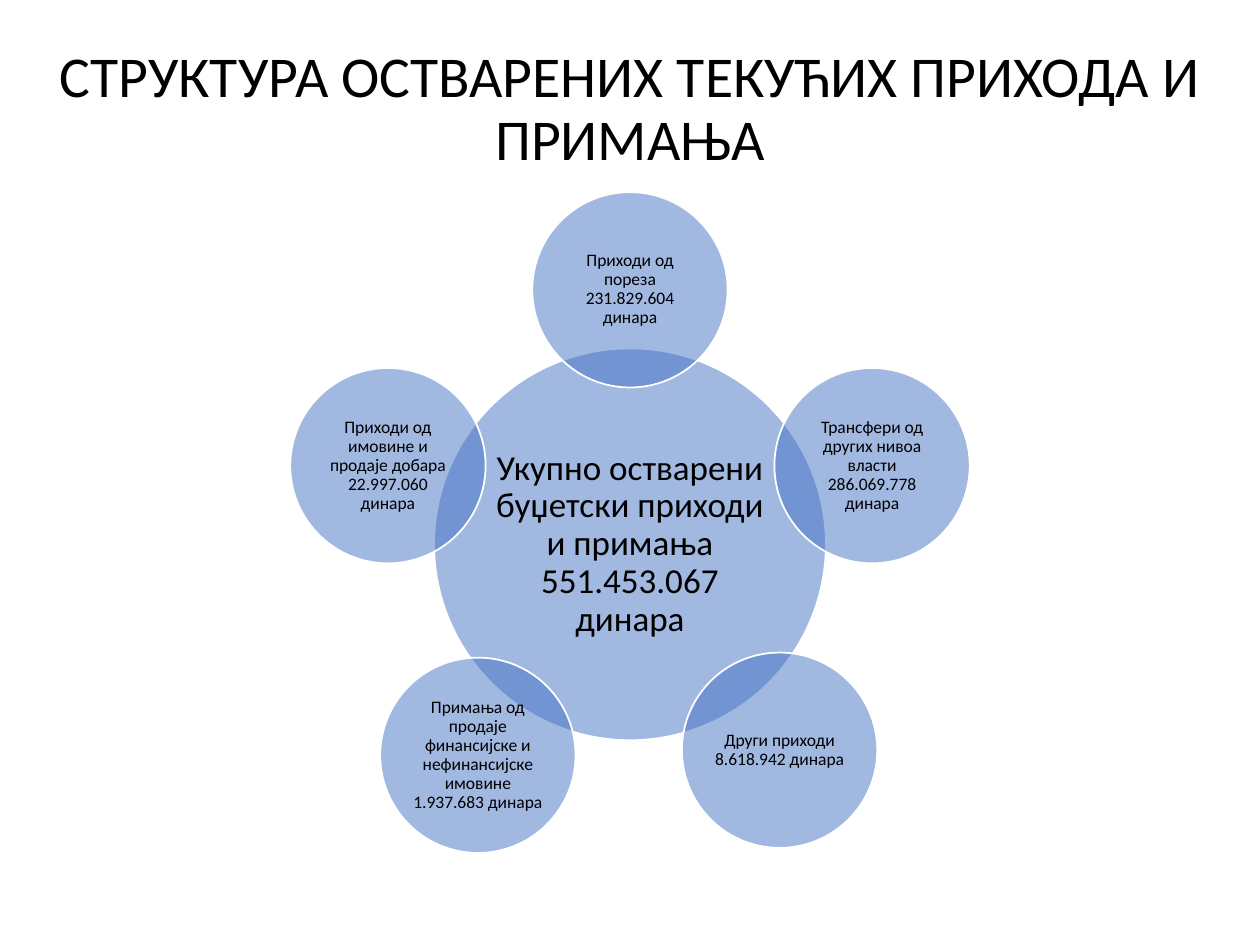
from math import cos, radians, sin, sqrt

from lxml.etree import SubElement
from pptx import Presentation
from pptx.dml.color import RGBColor
from pptx.enum.shapes import MSO_SHAPE as Shape
from pptx.enum.text import MSO_ANCHOR as Anchor, PP_ALIGN as Align
from pptx.oxml.ns import qn
from pptx.util import Inches, Pt

TITLE = "СТРУКТУРА ОСТВАРЕНИХ ТЕКУЋИХ ПРИХОДА И ПРИМАЊА"
TOTAL = "Укупно остварени буџетски приходи и примања 551.453.067 динара"
# Clockwise from the top: text, nudge right, nudge down
SOURCES = [
    ("Приходи од пореза 231.829.604 динара", 0, 0),
    ("Трансфери од других нивоа власти 286.069.778 динара", 0, 0),
    ("Други приходи 8.618.942 динара", 0, 0),
    ("Примања од продаје финансијске и нефинансијске имовине 1.937.683 динара",
     -0.02, 0.04),
    ("Приходи од имовине и продаје добара 22.997.060 динара", 0, 0),
]

COLORS = {"circle": "4472C4", "outline": "FFFFFF", "text": "000000"}
FONT = "Calibri"
CENTER_X, CENTER_Y = 5, 4.32
ORBIT = 2.02
TOTAL_SIZE, SOURCE_SIZE = 3.11, 1.55


def color(name):
    return RGBColor.from_string(COLORS[name])


def add_text(shapes, text, left, top, width, height, size, anchor, inset):
    box = shapes.add_textbox(*map(Inches, (left, top, width, height)))
    frame = box.text_frame
    frame.word_wrap = True
    frame.vertical_anchor = anchor
    frame.margin_left = frame.margin_right = Inches(inset[0])
    frame.margin_top = frame.margin_bottom = Inches(inset[1])
    para = frame.paragraphs[0]
    para.alignment = Align.CENTER
    para.line_spacing = 0.9
    span = para.add_run()
    span.text = text
    span.font.name = FONT
    span.font.size = Pt(size)
    span.font.color.rgb = color("text")


def add_circle(shapes, text, x, y, diameter, size, inset):
    """Add a half-transparent circle centred on x, y with text in its inner square."""
    corner = (x - diameter / 2, y - diameter / 2)
    circle = shapes.add_shape(
        Shape.OVAL, *map(Inches, (*corner, diameter, diameter)))
    circle.shadow.inherit = False
    circle.fill.solid()
    circle.fill.fore_color.rgb = color("circle")
    fill_color = circle.fill._xPr.find(qn("a:solidFill"))[0]
    SubElement(fill_color, qn("a:alpha"), val="50000")
    circle.line.color.rgb = color("outline")
    circle.line.width = Pt(1)

    side = diameter / sqrt(2)
    add_text(shapes, text, x - side / 2, y - side / 2, side, side,
             size, Anchor.MIDDLE, (inset, inset))


def main():
    deck = Presentation()
    deck.slide_width, deck.slide_height = Inches(10), Inches(7.5)
    page = deck.slides.add_slide(deck.slide_layouts[6])

    add_text(page.shapes, TITLE, 0.3, 0.25, 9.4, 1.17,
             33, Anchor.BOTTOM, (0.1, 0.05))

    diagram = page.shapes.add_group_shape().shapes
    add_circle(diagram, TOTAL, CENTER_X, CENTER_Y, TOTAL_SIZE, 20, 0.03)
    for index, (text, nudge_x, nudge_y) in enumerate(SOURCES):
        angle = radians(index * 360 / len(SOURCES) - 90)
        add_circle(diagram, text,
                   CENTER_X + ORBIT * cos(angle) + nudge_x,
                   CENTER_Y + ORBIT * sin(angle) + nudge_y,
                   SOURCE_SIZE, 10, 0.01)

    deck.save("out.pptx")


if __name__ == "__main__":
    main()
